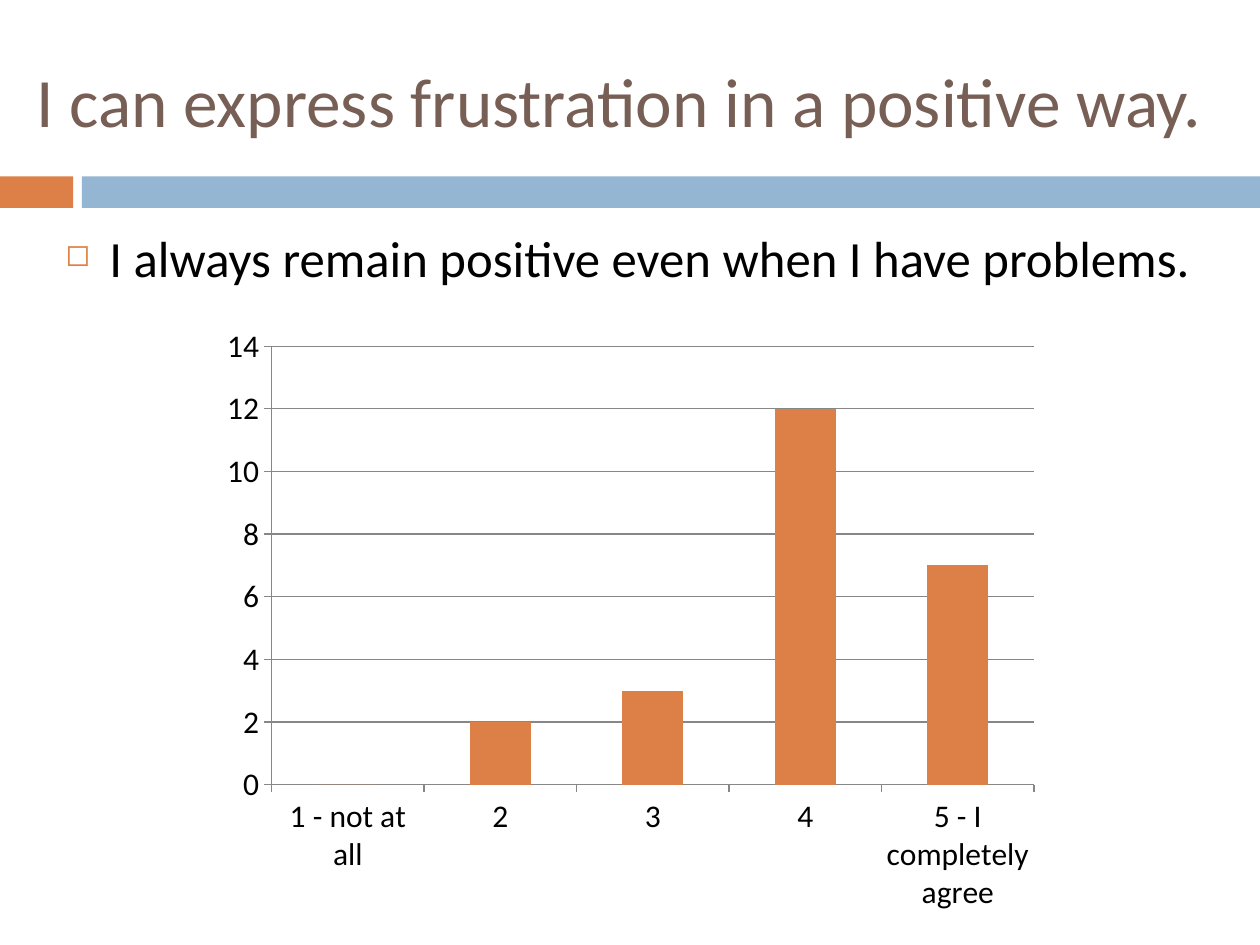
import pptx
import pptx.chart.data
import pptx.dml.color
import pptx.enum.chart
import pptx.enum.shapes
import pptx.enum.text
import pptx.util
from lxml import etree
from pptx.oxml.ns import qn

Inches, Pt = pptx.util.Inches, pptx.util.Pt
RGBColor = pptx.dml.color.RGBColor

ORANGE = RGBColor(0xDD, 0x80, 0x47)
BLUE = RGBColor(0x94, 0xB6, 0xD2)
BROWN = RGBColor(0x77, 0x5F, 0x55)
BLACK = RGBColor(0, 0, 0)
GRAY = RGBColor(0x87, 0x87, 0x87)

TITLE = "I can express frustration in a positive way."
STATEMENT = "I always remain positive even when I have problems."
RESPONSES = {
    "1 - not at all": 0,
    "2": 2,
    "3": 3,
    "4": 12,
    "5 - I completely agree": 7,
}

# left, top, width, height in inches
TITLE_BOX = (-0.17, 0.25, 10.17, 1.08)
STATEMENT_BOX = (0.42, 1.75, 9.17, 4.92)
CHART_BOX = (1.67, 2.5, 6.67, 4.83)
BANDS = [((0, 1.4, 0.58, 0.25), ORANGE), ((0.65, 1.4, 9.35, 0.25), BLUE)]

TITLE_FONT = {"name": "Calibri", "size": Pt(39.6), "color": BROWN}
STATEMENT_FONT = {"name": "Calibri", "size": Pt(29), "color": BLACK}
CHART_FONT = {"name": "Calibri", "size": Pt(18), "color": BLACK}
INDENT = Inches(0.35)


def inches(box):
    return [Inches(length) for length in box]


def format_font(font, values):
    for name, value in values.items():
        if name == "color":
            font.color.rgb = value
        else:
            setattr(font, name, value)


def add_bands(slide):
    for box, color in BANDS:
        band = slide.shapes.add_shape(
            pptx.enum.shapes.MSO_SHAPE.RECTANGLE, *inches(box))
        band.shadow.inherit = False
        band.fill.solid()
        band.fill.fore_color.rgb = color
        band.line.fill.background()


def write_title(slide):
    title = slide.shapes.title
    title.left, title.top, title.width, title.height = inches(TITLE_BOX)
    title.text_frame.vertical_anchor = pptx.enum.text.MSO_ANCHOR.MIDDLE
    paragraph = title.text_frame.paragraphs[0]
    paragraph.alignment = pptx.enum.text.PP_ALIGN.CENTER
    run = paragraph.add_run()
    run.text = TITLE
    format_font(run.font, TITLE_FONT)


def add_bullet(paragraph):
    properties = paragraph._p.get_or_add_pPr()
    properties.set("marL", str(INDENT))
    properties.set("indent", str(-INDENT))
    color = etree.SubElement(properties, qn("a:buClr"))
    etree.SubElement(color, qn("a:srgbClr"), val=str(ORANGE))
    etree.SubElement(properties, qn("a:buSzPct"), val="60000")
    etree.SubElement(properties, qn("a:buChar"), char="◻")


def add_statement(slide):
    frame = slide.shapes.add_textbox(*inches(STATEMENT_BOX)).text_frame
    frame.word_wrap = True
    paragraph = frame.paragraphs[0]
    paragraph.space_before = Pt(7)
    add_bullet(paragraph)
    run = paragraph.add_run()
    run.text = STATEMENT
    format_font(run.font, STATEMENT_FONT)


def add_response_chart(slide):
    data = pptx.chart.data.CategoryChartData()
    data.categories = list(RESPONSES)
    data.add_series("Series 1", list(RESPONSES.values()))
    chart = slide.shapes.add_chart(
        pptx.enum.chart.XL_CHART_TYPE.COLUMN_CLUSTERED,
        *inches(CHART_BOX), data).chart
    chart.has_legend = False
    chart.has_title = False
    format_font(chart.font, CHART_FONT)

    plot = chart.plots[0]
    plot.gap_width = 150
    plot.vary_by_categories = False
    fill = plot.series[0].format.fill
    fill.solid()
    fill.fore_color.rgb = ORANGE

    value_axis = chart.value_axis
    value_axis.minimum_scale, value_axis.maximum_scale = 0, 14
    value_axis.major_unit = 2
    value_axis.has_major_gridlines = True
    for part in (chart.category_axis, value_axis, value_axis.major_gridlines):
        part.format.line.color.rgb = GRAY
        part.format.line.width = Pt(0.75)
    for axis in (chart.category_axis, value_axis):
        axis.major_tick_mark = pptx.enum.chart.XL_TICK_MARK.OUTSIDE


def main():
    presentation = pptx.Presentation()
    presentation.slide_width = Inches(10)
    presentation.slide_height = Inches(7.5)
    title_only = presentation.slide_layouts[5]
    slide = presentation.slides.add_slide(title_only)
    add_bands(slide)
    write_title(slide)
    add_statement(slide)
    add_response_chart(slide)
    presentation.save("out.pptx")


if __name__ == "__main__":
    main()
